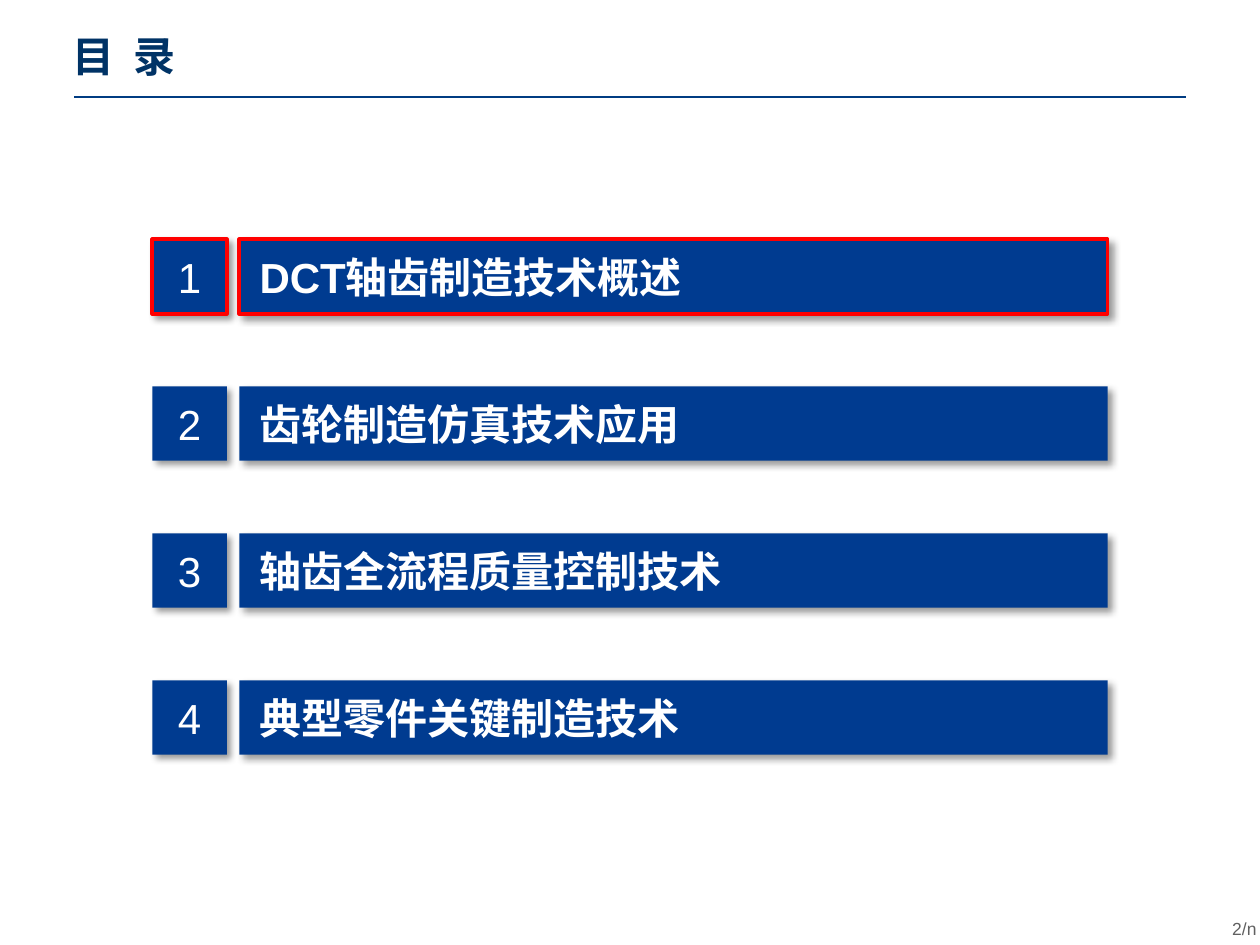
"""Build the contents slide: a ruled title and four numbered bars."""
from dataclasses import dataclass

from lxml.etree import SubElement as Sub
from pptx import Presentation
from pptx.dml.color import RGBColor as Rgb
from pptx.enum.shapes import MSO_CONNECTOR as Conn, MSO_SHAPE as Kind
from pptx.enum.text import MSO_ANCHOR as Anchor, MSO_AUTO_SIZE as Auto, PP_ALIGN as Align
from pptx.oxml.ns import qn
from pptx.util import Inches, Pt

HUES = {"bar": "003B90", "mark": "FF0000", "rule": "003C82", "title": "003366",
        "page": "606060", "text": "FFFFFF", "shade": "000000"}
LATIN, HAN = "Arial", "Noto Sans CJK SC"
WIDE, HIGH = 10, 7.5
TOP, STEP, SIDE = 1.9, 7 / 6, 0.59
NUM, BAR, SPAN = 1.21, 1.9, 6.89


@dataclass
class Style:
    size: float
    hue: str
    bold: bool = False
    face: str = LATIN
    align: Align = Align.LEFT


@dataclass
class Topic:
    name: str
    live: bool = False


HEAD = Style(24, "title", True, HAN)
PAGE = Style(10, "page", align=Align.RIGHT)
DIGIT = Style(24, "text", align=Align.CENTER)
LABEL = Style(24, "text", True)
TOPICS = [Topic("DCT轴齿制造技术概述", True), Topic("齿轮制造仿真技术应用"),
          Topic("轴齿全流程质量控制技术"), Topic("典型零件关键制造技术")]


def tint(name: str) -> Rgb:
    return Rgb.from_string(HUES[name])


def write(frame, text: str, style: Style) -> None:
    frame.text = text
    para = frame.paragraphs[0]
    para.alignment = style.align
    run = para.runs[0]
    font = run.font
    font.size, font.bold, font.name = Pt(style.size), style.bold, style.face
    font.color.rgb = tint(style.hue)
    Sub(font._element, qn("a:ea"), typeface=HAN)


def shade(shape) -> None:
    shape.shadow.inherit = False
    effect = shape._element.spPr.find(qn("a:effectLst"))
    outer = Sub(effect, qn("a:outerShdw"), blurRad=str(Pt(4)), dist=str(Pt(3)),
                dir="2700000", algn="tl", rotWithShape="0")
    color = Sub(outer, qn("a:srgbClr"), val=HUES["shade"])
    Sub(color, qn("a:alpha"), val="40000")


def block(group, left: float, top: float, width: float, text: str,
          style: Style, inset: float, live: bool) -> None:
    shape = group.shapes.add_shape(Kind.RECTANGLE, Inches(left), Inches(top),
                                   Inches(width), Inches(SIDE))
    shape.fill.solid()
    shape.fill.fore_color.rgb = tint("bar")
    if live:
        shape.line.color.rgb = tint("mark")
        shape.line.width = Pt(2.25)
    else:
        shape.line.fill.background()
    shade(shape)
    frame = shape.text_frame
    frame.word_wrap, frame.vertical_anchor = True, Anchor.MIDDLE
    frame.margin_left = Inches(inset)
    frame.margin_top = frame.margin_right = frame.margin_bottom = 0
    write(frame, text, style)


def entry(slide, row: int, topic: Topic) -> None:
    group = slide.shapes.add_group_shape()
    top = TOP + row * STEP
    block(group, NUM, top, SIDE, str(row + 1), DIGIT, 0, topic.live)
    block(group, BAR, top, SPAN, topic.name, LABEL, 0.16, topic.live)


def label(slide, box: tuple[float, ...], text: str, style: Style):
    frame = slide.shapes.add_textbox(*map(Inches, box)).text_frame
    frame.word_wrap = True
    write(frame, text, style)
    return frame


def rule(slide) -> None:
    y, edge = Inches(0.77), 0.059 * WIDE
    line = slide.shapes.add_connector(Conn.STRAIGHT, Inches(edge), y,
                                      Inches(WIDE - edge), y)
    line.line.color.rgb = tint("rule")
    line.line.width = Pt(1.5)
    Sub(line._element.spPr, qn("a:effectLst"))


def main() -> None:
    deck = Presentation()
    deck.slide_width, deck.slide_height = Inches(WIDE), Inches(HIGH)
    slide = deck.slides.add_slide(deck.slide_layouts[6])
    rule(slide)
    label(slide, (9.56, 7.24, 0.51, 0.24), "2/n", PAGE)
    title = label(slide, (0.48, 0.19, 1.07, 0.5), "目 录", HEAD)
    title.word_wrap, title.auto_size = False, Auto.SHAPE_TO_FIT_TEXT
    title.paragraphs[0].runs[0].font._element.set("spc", "270")
    for row, topic in enumerate(TOPICS):
        entry(slide, row, topic)
    deck.save("out.pptx")


if __name__ == "__main__":
    main()
